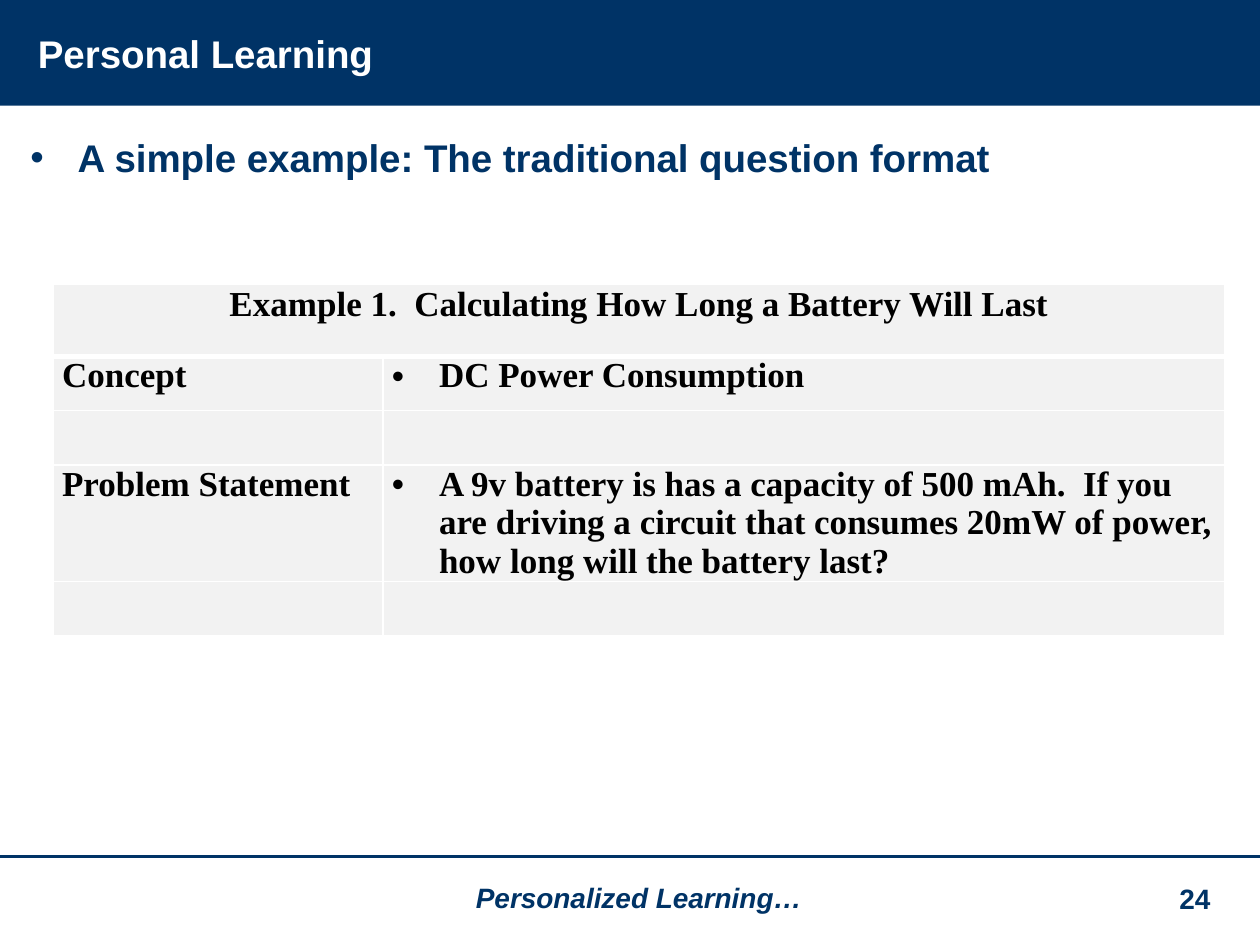
from lxml.etree import SubElement
from pptx import Presentation
from pptx.dml.color import RGBColor
from pptx.enum.shapes import MSO_CONNECTOR, MSO_SHAPE
from pptx.enum.text import MSO_ANCHOR, MSO_AUTO_SIZE, PP_ALIGN
from pptx.oxml.ns import qn
from pptx.util import Cm, Pt

NAVY = RGBColor(0x00, 0x33, 0x66)
WHITE = RGBColor(0xFF, 0xFF, 0xFF)
BLACK = RGBColor(0x00, 0x00, 0x00)
PALE_GRAY = RGBColor(0xF2, 0xF2, 0xF2)


class SlideBuilder:
    """Holds the style and the current slide."""

    heading_font = "Arial"
    table_font = "Times New Roman"
    indent = Cm(0.95)

    def __init__(self, slide):
        self.slide = slide

    def place(self, shape, left, top, width, height):
        shape.left, shape.top = Cm(left), Cm(top)
        shape.width, shape.height = Cm(width), Cm(height)

    def format(self, paragraph, name, size, color, align=PP_ALIGN.LEFT, italic=False):
        paragraph.alignment = align
        font = paragraph.font
        font.name, font.size, font.bold, font.italic = name, Pt(size), True, italic
        font.color.rgb = color

    def bullet(self, paragraph):
        properties = paragraph._p.get_or_add_pPr()
        properties.set("marL", str(self.indent))
        properties.set("indent", str(-self.indent))
        SubElement(properties, qn("a:buFont"), typeface="Arial")
        SubElement(properties, qn("a:buChar"), char="•")

    def band(self, left, top, width, height):
        shape = self.slide.shapes.add_shape(
            MSO_SHAPE.RECTANGLE, Cm(left), Cm(top), Cm(width), Cm(height))
        shape.shadow.inherit = False
        shape.fill.solid()
        shape.fill.fore_color.rgb = NAVY
        shape.line.fill.background()
        # Send the band behind the placeholders
        self.slide.shapes._spTree.insert(2, shape._element)

    def rule(self, top, width):
        line = self.slide.shapes.add_connector(
            MSO_CONNECTOR.STRAIGHT, 0, Cm(top), Cm(width), Cm(top))
        line.line.color.rgb = NAVY
        line.line.width = Pt(2)
        SubElement(line._element.spPr, qn("a:effectLst"))

    def title(self, text, *box):
        shape = self.slide.shapes.title
        self.place(shape, *box)
        frame = shape.text_frame
        frame.text = text
        frame.auto_size = MSO_AUTO_SIZE.NONE
        frame.vertical_anchor = MSO_ANCHOR.MIDDLE
        self.format(frame.paragraphs[0], self.heading_font, 22, WHITE)

    def body(self, text, *box):
        shape = self.slide.placeholders[1]
        self.place(shape, *box)
        frame = shape.text_frame
        frame.text = text
        frame.auto_size = MSO_AUTO_SIZE.NONE
        frame.margin_top = Cm(0.2)
        paragraph = frame.paragraphs[0]
        paragraph.space_before = Pt(0)
        self.bullet(paragraph)
        self.format(paragraph, self.heading_font, 22, NAVY)

    def footer(self, text, left, top, width, height, italic=False):
        box = self.slide.shapes.add_textbox(Cm(left), Cm(top), Cm(width), Cm(height))
        frame = box.text_frame
        frame.word_wrap = True
        frame.text = text
        self.format(frame.paragraphs[0], self.heading_font, 16, NAVY,
                    PP_ALIGN.CENTER, italic)

    def border(self, cell, side, width):
        line = SubElement(cell._tc.get_or_add_tcPr(), qn(f"a:{side}"), w=str(Pt(width)))
        fill = SubElement(line, qn("a:solidFill"))
        SubElement(fill, qn("a:srgbClr"), val=str(WHITE))

    def cell(self, cell, text, heading=False, bulleted=False, bottom=1, top=1):
        for side, width in (("lnL", 1), ("lnR", 1), ("lnT", top), ("lnB", bottom)):
            self.border(cell, side, width)
        cell.fill.solid()
        cell.fill.fore_color.rgb = PALE_GRAY
        if not text:
            return
        cell.margin_left = cell.margin_right = Cm(0.18)
        cell.margin_top = cell.margin_bottom = 0
        cell.text = text
        paragraph = cell.text_frame.paragraphs[0]
        if bulleted:
            self.bullet(paragraph)
        align = PP_ALIGN.CENTER if heading else PP_ALIGN.LEFT
        self.format(paragraph, self.table_font, 20, BLACK, align)

    def table(self, rows, widths, heights, left, top):
        table = self.slide.shapes.add_table(
            len(rows), len(widths), Cm(left), Cm(top),
            Cm(sum(widths)), Cm(sum(heights))).table
        table.horz_banding = False
        for column, width in zip(table.columns, widths):
            column.width = Cm(width)
        for row, height in zip(table.rows, heights):
            row.height = Cm(height)
        table.cell(0, 0).merge(table.cell(0, len(widths) - 1))
        for r, texts in enumerate(rows):
            for c, text in enumerate(texts):
                self.cell(table.cell(r, c), text, heading=r == 0, bulleted=c == 1,
                          bottom=3 if r == 0 else 1, top=3 if r == 1 else 1)


def main():
    presentation = Presentation()
    presentation.slide_width, presentation.slide_height = Cm(25.4), Cm(19.05)
    slide = presentation.slides.add_slide(presentation.slide_layouts[1])
    builder = SlideBuilder(slide)

    # Header
    builder.band(0, 0, 25.4, 2.13)
    builder.title("Personal Learning", 0.51, 0.53, 15.27, 1.07)

    # Content
    builder.body("A simple example: The traditional question format",
                 0.36, 2.51, 24.69, 14.35)
    builder.table(
        [
            ("Example 1.  Calculating How Long a Battery Will Last", ""),
            ("Concept", "DC Power Consumption"),
            ("", ""),
            ("Problem Statement",
             "A 9v battery is has a capacity of 500 mAh.  If you are driving a circuit "
             "that consumes 20mW of power, how long will the battery last?"),
            ("", ""),
        ],
        widths=[6.65, 16.97], heights=[1.45, 1.09, 1.09, 2.18, 1.09],
        left=1.07, top=5.74)

    # Footer
    builder.rule(17.27, 25.4)
    builder.footer("Personalized Learning…", 6.1, 17.63, 13.56, 0.94, italic=True)
    builder.footer("24", 23.19, 17.65, 1.8, 0.94)

    presentation.save("out.pptx")


if __name__ == "__main__":
    main()
